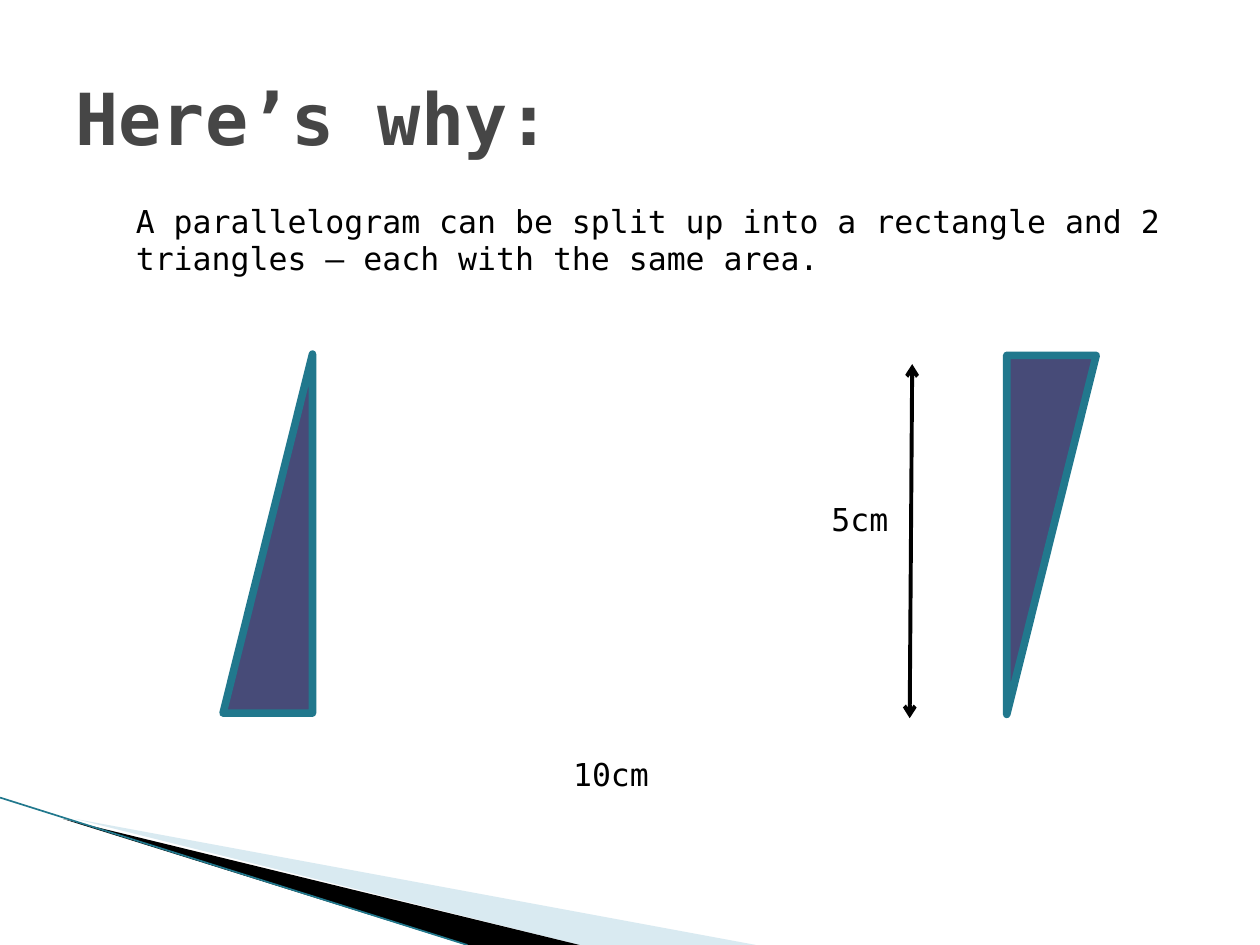
from lxml import etree
from pptx import Presentation
from pptx.dml.color import RGBColor
from pptx.enum.shapes import MSO_CONNECTOR, MSO_SHAPE
from pptx.enum.text import MSO_ANCHOR, MSO_AUTO_SIZE, PP_ALIGN
from pptx.oxml.ns import qn
from pptx.util import Inches, Pt

STRAIGHT = MSO_CONNECTOR.STRAIGHT
RIGHT_TRIANGLE = MSO_SHAPE.RIGHT_TRIANGLE
MIDDLE, TOP = MSO_ANCHOR.MIDDLE, MSO_ANCHOR.TOP
LEFT = PP_ALIGN.LEFT
FIXED, GROW = MSO_AUTO_SIZE.NONE, MSO_AUTO_SIZE.SHAPE_TO_FIT_TEXT
FONT = "DejaVu Sans Mono"
BLACK, TEAL, INDIGO, PALE_BLUE, GREY = "000000", "21788D", "474B78", "A0CBDC", "464646"

prs = Presentation()
prs.slide_width, prs.slide_height = Inches(10), Inches(7.5)
slide = prs.slides.add_slide(prs.slide_layouts[5])
shapes = slide.shapes

# Square grid of 100 columns by 75 rows
CELL = prs.slide_width // 100
rgb = RGBColor.from_string


def write(box, text, size=18, color=BLACK, bold=False, anchor=TOP, fit=GROW):
    frame = box.text_frame
    frame.word_wrap = True
    frame.auto_size = fit
    frame.vertical_anchor = anchor
    paragraph = frame.paragraphs[0]
    paragraph.alignment = LEFT
    run = paragraph.add_run()
    run.text = text
    run.font.name, run.font.size, run.font.bold = FONT, Pt(size), bold
    run.font.color.rgb = rgb(color)


def add_line(start, end, color, width):
    line = shapes.add_connector(STRAIGHT, *[int(v * CELL) for v in (*start, *end)])
    line.line.color.rgb = rgb(color)
    line.line.width = Pt(width)
    etree.SubElement(line._element.spPr, qn("a:effectLst"))
    return line


# Corner decoration: two wedges and a thin edge
wedges = [
    ([(5.5, 65.1), (59.5, 75), (45.6, 75), (5.5, 65)], PALE_BLUE, 40),
    ([(5.3, 64.9), (45.7, 75), (37.2, 75), (5.4, 65)], BLACK, 100),
]
for (first, *others), color, opacity in wedges:
    builder = shapes.build_freeform(*first, scale=CELL)
    builder.add_line_segments(others)
    wedge = builder.convert_to_shape()
    wedge.shadow.inherit = False
    wedge.fill.solid()
    wedge.fill.fore_color.rgb = rgb(color)
    wedge.line.fill.background()
    if opacity < 100:
        fill_color = wedge._element.spPr.find(".//" + qn("a:srgbClr"))
        etree.SubElement(fill_color, qn("a:alpha"), val=str(opacity * 1000))
add_line((0, 63.3), (37.1, 75), TEAL, 0.95)

# Title
title = shapes.title
title.left, title.top, title.width, title.height = [int(v * CELL) for v in (5, 3, 90, 12.5)]
write(title, "Here’s why:", size=41, color=GREY, bold=True, anchor=MIDDLE, fit=FIXED)

# Triangles at the two ends of the parallelogram
for left, top, turn in [(7, 38.8, 270), (69.2, 38.9, 90)]:
    triangle = shapes.add_shape(
        RIGHT_TRIANGLE, *[int(v * CELL) for v in (left, top, 28.5, 7.1)])
    triangle.rotation = turn
    triangle.shadow.inherit = False
    triangle.fill.solid()
    triangle.fill.fore_color.rgb = rgb(INDIGO)
    triangle.line.color.rgb = rgb(TEAL)
    triangle.line.width = Pt(4.33)

# Explanation and measurements
for text, *place in [
    ("A parallelogram can be split up into a rectangle and 2 triangles"
     " – each with the same area.", 9.8, 15.5, 84.3, 7.1),
    ("10cm", 44.5, 59.4, 11, 4),
    ("5cm", 65, 39.2, 11, 4),
]:
    write(shapes.add_textbox(*[int(v * CELL) for v in place]), text)

# Height arrow
height_arrow = add_line((72.4, 28.9), (72.2, 57), BLACK, 2.25)
outline = height_arrow.line._get_or_add_ln()
for end in ("a:headEnd", "a:tailEnd"):
    etree.SubElement(outline, qn(end), type="arrow")

prs.save("out.pptx")
